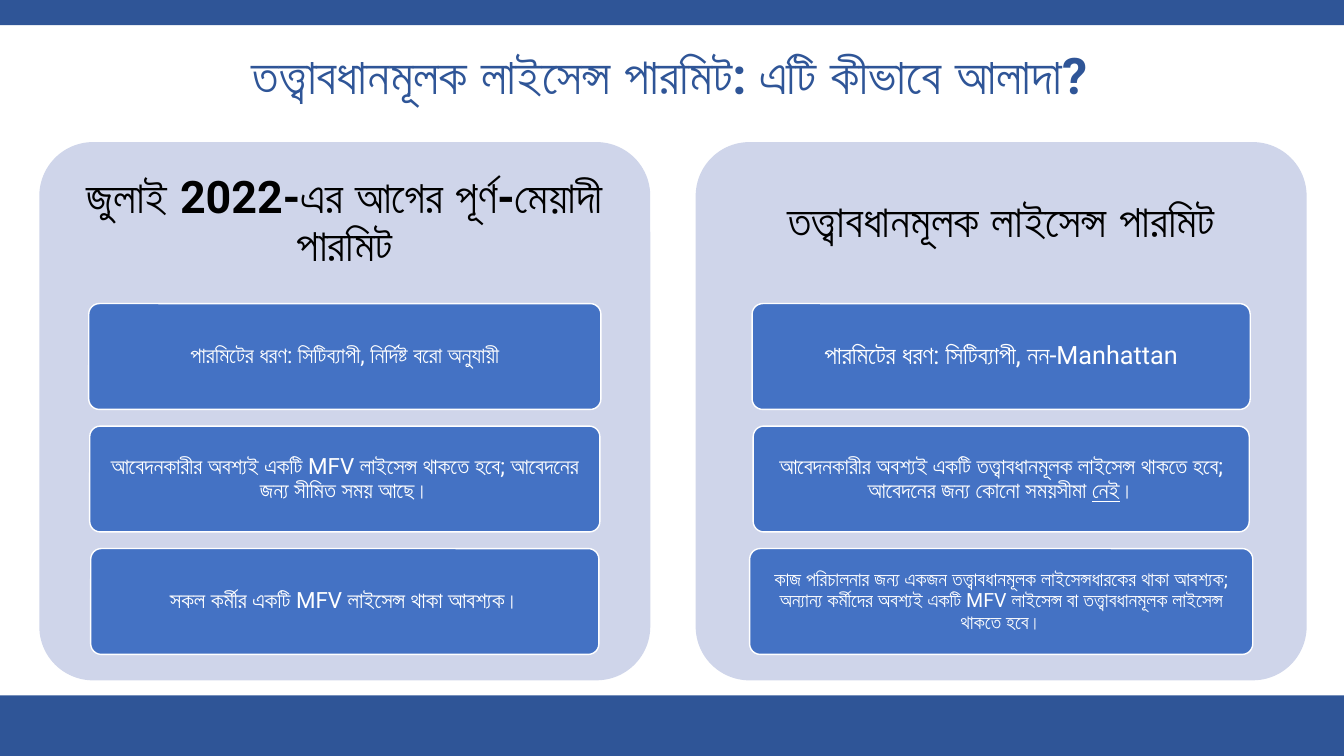
from pptx import Presentation
from pptx import util as u
from pptx.dml.color import RGBColor
from pptx.enum import shapes, text

SLIDE_W, SLIDE_H = 13.33, 7.5
NAVY, BLUE, PALE, WHITE, BLACK = "2F5597", "4472C4", "CFD5EA", "FFFFFF", "000000"
CORNER = 0.1

TITLE = "তত্ত্বাবধানমূলক লাইসেন্স পারমিট: এটি কীভাবে আলাদা?"
# Each card: width, font size, text runs as (wording, underlined)
PERMITS = [
    ("জুলাই 2022-এর আগের পূর্ণ-মেয়াদী পারমিট", [
        (5.08, 16, [("পারমিটের ধরণ: সিটিব্যাপী, নির্দিষ্ট বরো অনুযায়ী", False)]),
        (5.06, 16, [("আবেদনকারীর অবশ্যই একটি MFV লাইসেন্স থাকতে হবে; "
                     "আবেদনের জন্য সীমিত সময় আছে।", False)]),
        (5.04, 16, [("সকল কর্মীর একটি MFV লাইসেন্স থাকা আবশ্যক।", False)]),
    ]),
    ("তত্ত্বাবধানমূলক লাইসেন্স পারমিট", [
        (4.94, 18, [("পারমিটের ধরণ: সিটিব্যাপী, নন-Manhattan", False)]),
        (4.92, 16, [("আবেদনকারীর অবশ্যই একটি তত্ত্বাবধানমূলক লাইসেন্স থাকতে হবে; "
                     "আবেদনের জন্য কোনো সময়সীমা ", False), ("নেই", True), ("।", False)]),
        (4.99, 14, [("কাজ পরিচালনার জন্য একজন তত্ত্বাবধানমূলক লাইসেন্সধারকের থাকা আবশ্যক; "
                     "অন্যান্য কর্মীদের অবশ্যই একটি MFV লাইসেন্স বা "
                     "তত্ত্বাবধানমূলক লাইসেন্স থাকতে হবে।", False)]),
    ]),
]


def color(hex_code):
    return RGBColor.from_string(hex_code)


def set_all(target, values):
    for name, value in values.items():
        setattr(target, name, value)


def inches(box):
    return [u.Inches(length) for length in box]


def write(shape, runs, size, ink, bold=False, inset=(0.1, 0.05)):
    """Fill a shape with one centred paragraph of (wording, underlined) runs."""
    across, down = inches(inset)
    frame = shape.text_frame
    set_all(frame, {
        "word_wrap": True, "vertical_anchor": text.MSO_ANCHOR.MIDDLE,
        "margin_left": across, "margin_right": across,
        "margin_top": down, "margin_bottom": down,
    })
    paragraph = frame.paragraphs[0]
    set_all(paragraph, {"alignment": text.PP_ALIGN.CENTER, "line_spacing": 0.9})
    for wording, underlined in runs:
        run = paragraph.add_run()
        run.text = wording
        set_all(run.font, {"name": "Roboto", "size": u.Pt(size), "bold": bold})
        run.font.color.rgb = color(ink)
        if underlined:
            run.font.underline = True


def add_block(slide, box, fill, rounded=False, outline=None):
    kind = shapes.MSO_SHAPE.ROUNDED_RECTANGLE if rounded else shapes.MSO_SHAPE.RECTANGLE
    block = slide.shapes.add_shape(kind, *inches(box))
    block.shadow.inherit = False
    block.fill.solid()
    block.fill.fore_color.rgb = color(fill)
    if rounded:
        block.adjustments[0] = CORNER
    if outline:
        block.line.color.rgb = color(outline)
        block.line.width = u.Pt(1)
    else:
        block.line.fill.background()
    return block


def add_bands(slide):
    for top, height in ((0, 0.25), (6.9, 0.6)):
        add_block(slide, (0, top, SLIDE_W, height), NAVY)


def add_title(slide, box):
    title = slide.shapes.title
    set_all(title, dict(zip(("left", "top", "width", "height"), inches(box))))
    write(title, [(TITLE, False)], 36, NAVY, bold=True)


def add_permit(slide, box, heading, cards):
    """Place a panel with its heading in the top 30% and the cards below."""
    left, top, width, height = box
    heading_height = 0.3 * height
    add_block(slide, box, PALE, rounded=True)
    heading_box = slide.shapes.add_textbox(*inches((left, top, width, heading_height)))
    write(heading_box, [(heading, False)], 32, BLACK, bold=True, inset=(0.13, 0.13))

    card_height = 1.05
    pitch = 1.215
    for row, (card_width, size, runs) in enumerate(cards):
        card = add_block(slide, (left + (width - card_width) / 2,
                                 top + heading_height + row * pitch,
                                 card_width, card_height),
                         BLUE, rounded=True, outline=WHITE)
        write(card, runs, size, WHITE, inset=(0.04, 0.03))


def main():
    deck = Presentation()
    deck.slide_width, deck.slide_height = inches((SLIDE_W, SLIDE_H))
    slide = deck.slides.add_slide(deck.slide_layouts[5])
    add_bands(slide)
    add_title(slide, (-0.13, 0.4, 13.54, 0.75))
    panel_width, gutter = 6.06, 0.45
    for column, (heading, cards) in enumerate(PERMITS):
        left = 0.39 + column * (panel_width + gutter)
        add_permit(slide, (left, 1.41, panel_width, 5.34), heading, cards)
    deck.save("out.pptx")


if __name__ == "__main__":
    main()
